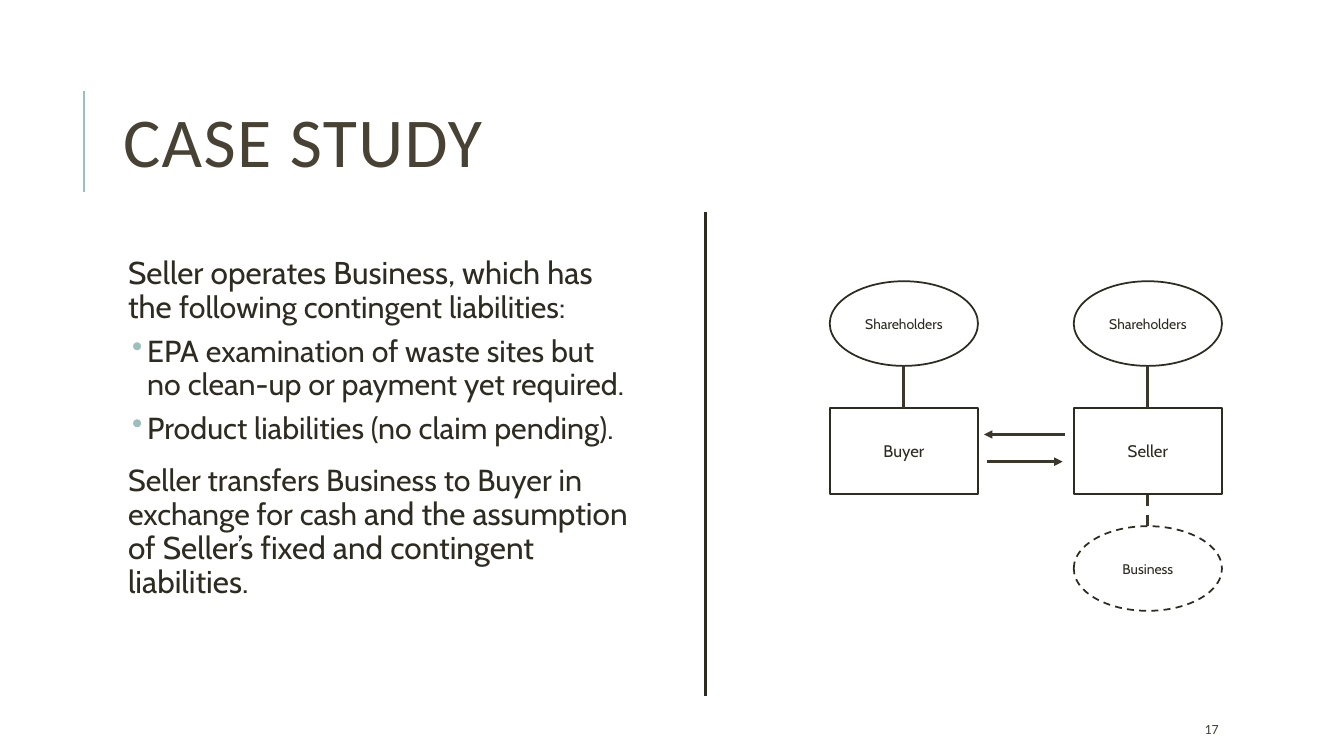
"""Build the case study slide with a deal diagram."""
from lxml import etree
from pptx import Presentation
from pptx import util as u
from pptx.dml.color import RGBColor
from pptx.enum import dml, shapes, text
from pptx.oxml.ns import qn

PX = 9144
COLOURS = {"accent": "9CBEBD", "heading": "474233", "ink": "2E2B21", "link": "3B372A"}
BODY_FONT, HEADING_FONT = "Cabin", "Calibri"
LARGE, SMALL = 22.5, 21.7
NODE_WIDTH, OVAL_HEIGHT, BOX_HEIGHT = 147, 84, 85
BUYER_LEFT, SELLER_LEFT = 823, 1065
OWNERS_TOP, PARTY_TOP, BUSINESS_TOP = 279, 405, 522

STATEMENTS = [
    (False, [("Seller operates Business, which has ", LARGE),
             ("following contingent liabilities:", SMALL)]),
    (True, [("EPA examination of waste sites but no clean-up or payment yet required.", SMALL)]),
    (True, [("Product liabilities (no claim pending).", SMALL)]),
    (False, [("Seller transfers Business to Buyer in exchange for cash ", SMALL),
             ("and the assumption of Seller’s fixed and contingent liabilities.", LARGE)]),
]
STATEMENTS[0][1][0] = ("Seller operates Business, which has the ", LARGE)


def px(*lengths):
    return [u.Emu(length * PX) for length in lengths]


def colour(name):
    return RGBColor.from_string(COLOURS[name])


def style_run(run, size, font, ink):
    run.font.size, run.font.name = u.Pt(size), font
    run.font.color.rgb = colour(ink)


def set_frame(frame, anchor, inset):
    frame.word_wrap = True
    frame.vertical_anchor = anchor
    frame.margin_left, frame.margin_top, frame.margin_right, frame.margin_bottom = px(*[inset] * 4)


def style_line(line, ink, width, dashed=False):
    line.color.rgb = colour(ink)
    line.width = u.Pt(width)
    if dashed:
        line.dash_style = dml.MSO_LINE.DASH


def add_title(slide, wording):
    title = slide.shapes.title
    title.left, title.top, title.width, title.height = px(112, 64, 1063, 164)
    frame = title.text_frame
    frame.text = wording
    set_frame(frame, text.MSO_ANCHOR.MIDDLE, 10)
    frame.auto_size = text.MSO_AUTO_SIZE.NONE
    heading = frame.paragraphs[0]
    heading.alignment, heading.line_spacing = text.PP_ALIGN.LEFT, 0.8
    style_run(heading.runs[0], 50, HEADING_FONT, "heading")
    heading.runs[0]._r.get_or_add_rPr().set("spc", "100")


def add_bullet(paragraph):
    properties = paragraph._p.get_or_add_pPr()
    tint = etree.SubElement(properties, qn("a:buClr"))
    etree.SubElement(tint, qn("a:srgbClr"), val=COLOURS["accent"])
    etree.SubElement(properties, qn("a:buChar"), char="•")


def add_statements(slide):
    frame = slide.shapes.add_textbox(*px(112, 250, 520, 440)).text_frame
    set_frame(frame, text.MSO_ANCHOR.TOP, 5)
    for index, (bulleted, parts) in enumerate(STATEMENTS):
        statement = frame.add_paragraph() if index else frame.paragraphs[0]
        statement.line_spacing = 0.9
        statement.space_before, statement.space_after = u.Pt(6 if bulleted else 12), u.Pt(2)
        margin, indent = (29, -15) if bulleted else (10, 0)
        properties = statement._p.get_or_add_pPr()
        properties.set("marL", str(margin * PX))
        properties.set("indent", str(indent * PX))
        if bulleted:
            add_bullet(statement)
        for wording, size in parts:
            run = statement.add_run()
            run.text = wording
            style_run(run, size, BODY_FONT, "ink")


def add_node(slide, preset, left, top, label, dashed=False):
    is_box = preset == shapes.MSO_SHAPE.RECTANGLE
    height = BOX_HEIGHT if is_box else OVAL_HEIGHT
    node = slide.shapes.add_shape(preset, *px(left, top, NODE_WIDTH, height))
    node.shadow.inherit = False
    node.fill.background()
    style_line(node.line, "ink", 1.25, dashed)
    frame = node.text_frame
    set_frame(frame, text.MSO_ANCHOR.MIDDLE, 5 if is_box else 0)
    frame.text = label
    frame.paragraphs[0].alignment = text.PP_ALIGN.CENTER
    style_run(frame.paragraphs[0].runs[0], 12 if is_box else 10, BODY_FONT, "ink")


def add_line(slide, start, end, ink="link", width=2, dashed=False, arrow=False):
    line = slide.shapes.add_connector(shapes.MSO_CONNECTOR.STRAIGHT, *px(*start, *end))
    style_line(line.line, ink, width, dashed)
    if arrow:
        etree.SubElement(line.line._get_or_add_ln(), qn("a:tailEnd"), type="triangle")
    etree.SubElement(line._element.spPr, qn("a:effectLst"))


def add_party(slide, left, label):
    middle = left + NODE_WIDTH // 2
    add_node(slide, shapes.MSO_SHAPE.OVAL, left, OWNERS_TOP, "Shareholders")
    add_node(slide, shapes.MSO_SHAPE.RECTANGLE, left, PARTY_TOP, label)
    add_line(slide, (middle, OWNERS_TOP + OVAL_HEIGHT), (middle, PARTY_TOP))


def add_deal(slide):
    add_party(slide, BUYER_LEFT, "Buyer")
    add_party(slide, SELLER_LEFT, "Seller")
    add_line(slide, (1056, 431), (976, 431), arrow=True)
    add_line(slide, (979, 458), (1054, 458), arrow=True)
    add_node(slide, shapes.MSO_SHAPE.OVAL, SELLER_LEFT, BUSINESS_TOP, "Business", dashed=True)
    middle = SELLER_LEFT + NODE_WIDTH // 2
    add_line(slide, (middle, BUSINESS_TOP), (middle, PARTY_TOP + BOX_HEIGHT), dashed=True)


def add_page_number(slide, number):
    frame = slide.shapes.add_textbox(*px(1185, 708, 106, 30)).text_frame
    set_frame(frame, text.MSO_ANCHOR.MIDDLE, 10)
    frame.margin_top = frame.margin_bottom = 0
    frame.text = number
    style_run(frame.paragraphs[0].runs[0], 10, HEADING_FONT, "heading")


def main():
    deck = Presentation()
    deck.slide_width, deck.slide_height = px(1333, 750)
    slide = deck.slides.add_slide(deck.slide_layouts[5])
    add_line(slide, (83, 190), (83, 90), "accent", 1.5)
    add_title(slide, "CASE STUDY")
    add_statements(slide)
    add_line(slide, (700, 210), (700, 690), "ink")
    add_deal(slide)
    add_page_number(slide, "17")
    deck.save("out.pptx")


if __name__ == "__main__":
    main()
